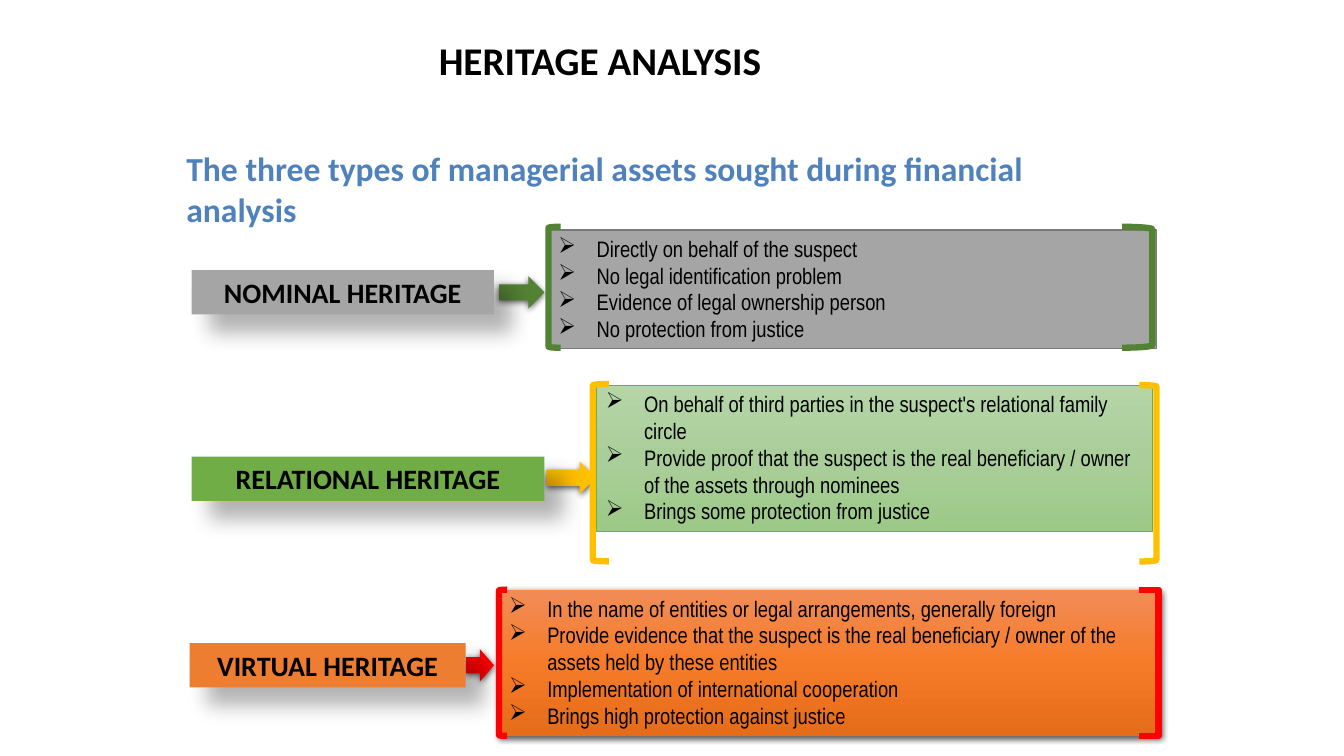
from dataclasses import dataclass
from typing import Optional

from lxml.etree import SubElement
from pptx import Presentation
from pptx.dml.color import RGBColor
from pptx.enum.shapes import MSO_SHAPE as Shape
from pptx.enum.text import MSO_ANCHOR as Anchor, MSO_AUTO_SIZE as AutoSize, PP_ALIGN as Align
from pptx.oxml.ns import qn
from pptx.shapes.autoshape import Shape as AutoShape
from pptx.slide import Slide
from pptx.text.text import TextFrame
from pptx.util import Inches, Pt

Box = tuple[float, float, float, float]


@dataclass(frozen=True)
class Theme:
    """Fonts, type sizes and colours of the slide."""
    heading_font: str = "Calibri"
    body_font: str = "Arial Narrow"
    title_size: int = 28
    subtitle_size: int = 24
    label_size: int = 20
    body_size: int = 16
    bracket_width: float = 4.5
    black: str = "000000"
    blue: str = "4F81BD"
    gray: str = "A5A5A5"
    dark_gray: str = "7A7A7A"
    green: str = "70AD47"
    dark_green: str = "548235"
    gold: str = "FFC000"
    orange: str = "ED7D31"
    red: str = "FF0000"
    green_fade: tuple[str, ...] = ("B5D5A7", "AACE9A", "9CC987")
    orange_fade: tuple[str, ...] = ("F18C57", "F67B28", "E56C19")


@dataclass(frozen=True)
class Shadow:
    """Outer shadow: opacity in percent, blur and distance in points, angle."""
    alpha: int
    blur: float
    dist: float
    angle: int


@dataclass(frozen=True)
class Heritage:
    """One row: label, arrow and bracketed list of traits."""
    name: str
    label: Box
    label_fill: str
    arrow: Box
    accent: str
    panel: Box
    panel_fill: tuple[str, ...]
    left: Box
    right: Box
    traits: tuple[str, ...]
    panel_line: Optional[tuple[str, float]] = None
    panel_shadow: Optional[Shadow] = None
    square_right: bool = False


T = Theme()
TIGHT = Shadow(63, 4.5, 1.5, 90)
SOFT = Shadow(30, 15, 18, 45)

ROWS = (
    Heritage(
        "NOMINAL HERITAGE", (1.9, 2.68, 3, 0.44), T.gray,
        (4.95, 2.74, 0.45, 0.32), T.dark_green,
        (5.44, 2.28, 6.03, 1.18), (T.gray,),
        (5.44, 2.25, 0.12, 1.2), (11.13, 2.25, 0.3, 1.2),
        ("Directly on behalf of the suspect",
         "No legal identification problem",
         "Evidence of legal ownership person",
         "No protection from justice"),
        panel_line=(T.dark_gray, 1)),
    Heritage(
        "RELATIONAL HERITAGE", (1.9, 4.53, 3.5, 0.44), T.green,
        (5.42, 4.58, 0.49, 0.32), T.gold,
        (5.91, 3.82, 5.52, 1.45), T.green_fade,
        (5.88, 3.81, 0.16, 1.76), (11.3, 3.82, 0.17, 1.75),
        ("On behalf of third parties in the suspect's relational family circle",
         "Provide proof that the suspect is the real beneficiary / owner "
         "of the assets through nominees",
         "Brings some protection from justice"),
        panel_line=(T.green, 0.5)),
    Heritage(
        "VIRTUAL HERITAGE", (1.88, 6.38, 2.74, 0.44), T.orange,
        (4.62, 6.44, 0.28, 0.32), T.red,
        (4.95, 5.85, 6.58, 1.45), T.orange_fade,
        (4.95, 5.85, 0.08, 1.45), (11.3, 5.85, 0.19, 1.45),
        ("In the name of entities or legal arrangements, generally foreign",
         "Provide evidence that the suspect is the real beneficiary / owner "
         "of the assets held by these entities",
         "Implementation of international cooperation",
         "Brings high protection against justice"),
        panel_shadow=TIGHT, square_right=True),
)


def set_fill(sp: AutoShape, colors: tuple[str, ...]) -> None:
    """Fill with nothing, one colour, or an even top-down gradient."""
    if not colors:
        sp.fill.background()
    elif len(colors) == 1:
        sp.fill.solid()
        sp.fill.fore_color.rgb = RGBColor.from_string(colors[0])
    else:
        sp.fill.gradient()
        sp.fill.gradient_angle = 270
        stops = sp.element.spPr.find(qn("a:gradFill")).find(qn("a:gsLst"))
        for stop in list(stops):
            stops.remove(stop)
        for i, color in enumerate(colors):
            stop = SubElement(stops, qn("a:gs"), pos=str(100000 * i // (len(colors) - 1)))
            SubElement(stop, qn("a:srgbClr"), val=color)


def set_shadow(sp: AutoShape, shadow: Shadow) -> None:
    """Put a black outer shadow on a shape."""
    effects = sp.element.spPr.find(qn("a:effectLst"))
    outer = SubElement(effects, qn("a:outerShdw"), blurRad=str(Pt(shadow.blur)),
                       dist=str(Pt(shadow.dist)), dir=str(shadow.angle * 60000),
                       algn="tl", rotWithShape="0")
    color = SubElement(outer, qn("a:srgbClr"), val=T.black)
    SubElement(color, qn("a:alpha"), val=str(shadow.alpha * 1000))


def add_shape(s: Slide, kind: Shape, box: Box, colors: tuple[str, ...] = (),
              line: Optional[tuple[str, float]] = None,
              shadow: Optional[Shadow] = None) -> AutoShape:
    """Add a preset shape with its fill, line and shadow."""
    sp = s.shapes.add_shape(kind, *map(Inches, box))
    sp.shadow.inherit = False
    set_fill(sp, colors)
    if line:
        sp.line.color.rgb = RGBColor.from_string(line[0])
        sp.line.width = Pt(line[1])
    else:
        sp.line.fill.background()
    if shadow:
        set_shadow(sp, shadow)
    return sp


def write(tf: TextFrame, lines: tuple[str, ...], size: int, align: Align = Align.LEFT,
          color: str = T.black, bullets: bool = False) -> None:
    """Write bold heading lines, or plain bulleted body lines."""
    tf.word_wrap = True
    tf.auto_size = AutoSize.SHAPE_TO_FIT_TEXT
    for i, text in enumerate(lines):
        p = tf.add_paragraph() if i else tf.paragraphs[0]
        p.alignment = align
        if bullets:
            props = p._p.get_or_add_pPr()
            props.set("marL", str(Inches(0.38)))
            props.set("indent", str(Inches(-0.38)))
            SubElement(props, qn("a:buChar"), char="➢")
        r = p.add_run()
        r.text = text
        r.font.name = T.body_font if bullets else T.heading_font
        r.font.size = Pt(size)
        r.font.bold = not bullets
        r.font.color.rgb = RGBColor.from_string(color)


def add_heritage(s: Slide, row: Heritage) -> None:
    """Draw one heritage row."""
    add_shape(s, Shape.RIGHT_ARROW, row.arrow, (row.accent,), shadow=TIGHT)
    label = add_shape(s, Shape.RECTANGLE, row.label, (row.label_fill,), shadow=SOFT)
    write(label.text_frame, (row.name,), T.label_size, Align.CENTER)
    panel = add_shape(s, Shape.RECTANGLE, row.panel, row.panel_fill,
                      row.panel_line, row.panel_shadow)
    panel.text_frame.vertical_anchor = Anchor.TOP
    write(panel.text_frame, row.traits, T.body_size, bullets=True)
    edge = (row.accent, T.bracket_width)
    add_shape(s, Shape.LEFT_BRACKET, row.left, line=edge)
    right = add_shape(s, Shape.RIGHT_BRACKET, row.right, line=edge)
    if row.square_right:
        right.adjustments[0] = 0


def main() -> None:
    """Build and save the slide."""
    prs = Presentation()
    prs.slide_width, prs.slide_height = Inches(13.33), Inches(7.5)
    s = prs.slides.add_slide(prs.slide_layouts[6])
    title = s.shapes.add_textbox(*map(Inches, (2.34, 0.31, 7.22, 0.57)))
    write(title.text_frame, ("HERITAGE ANALYSIS",), T.title_size, Align.CENTER)
    subtitle = s.shapes.add_textbox(*map(Inches, (1.75, 1.42, 9.46, 0.91)))
    write(subtitle.text_frame,
          ("The three types of managerial assets sought during financial analysis",),
          T.subtitle_size, color=T.blue)
    for row in ROWS:
        add_heritage(s, row)
    prs.save("out.pptx")


if __name__ == "__main__":
    main()
